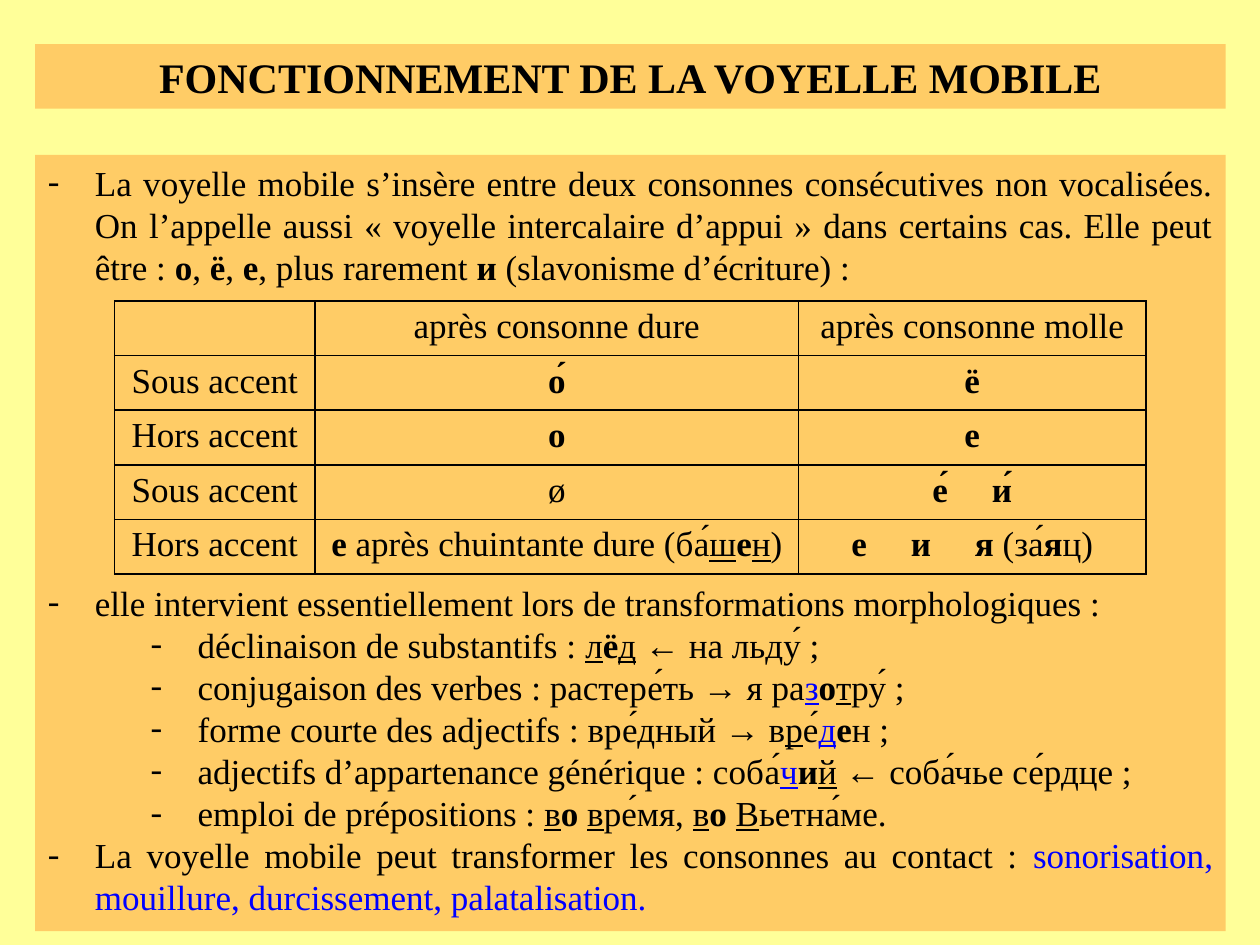
from dataclasses import dataclass

from lxml import etree
from pptx import Presentation
from pptx.dml.color import RGBColor
from pptx.enum.text import MSO_ANCHOR, MSO_AUTO_SIZE, PP_ALIGN
from pptx.oxml.ns import qn
from pptx.util import Cm, Pt

CENTER, JUSTIFY = PP_ALIGN.CENTER, PP_ALIGN.JUSTIFY
TOP, MIDDLE = MSO_ANCHOR.TOP, MSO_ANCHOR.MIDDLE
NO_AUTOFIT = MSO_AUTO_SIZE.NONE


@dataclass(frozen=True)
class Theme:
    """Colours, font and type sizes of the slide."""
    background: str = "FFFF99"
    panel: str = "FFCC66"
    text: str = "000000"
    accent: str = "0000FF"
    font: str = "Times New Roman"
    title_size: int = 24
    body_size: int = 20
    border: float = 1


@dataclass(frozen=True)
class Box:
    """A rectangle in centimetres."""
    left: float
    top: float
    width: float
    height: float

    def lengths(self):
        """Return left, top, width and height as lengths."""
        return [Cm(value) for value in (self.left, self.top, self.width, self.height)]


THEME = Theme()
TITLE_BOX = Box(0.71, 0.89, 24, 1.3)
BODY_BOX = Box(0.71, 3.12, 24, 15.65)

BOLD = {"bold": True}
UNDERLINED = {"underline": True}
BLUE = {"color": THEME.accent}
CHANGED = {**BLUE, **UNDERLINED}
WIDE_GAP = (" ", {"bold": True, "tracking": 20})

HANGING = 0.95
LEVEL_MARGINS = (0.95, 3.02)
TABLE_GAP = 168

PARAGRAPHS = [
    (0, 0, ["La voyelle mobile s’insère entre deux consonnes consécutives non vocalisées. "
            "On l’appelle aussi « voyelle intercalaire d’appui » dans certains cas. "
            "Elle peut être : ", ("о", BOLD), ", ", ("ё", BOLD), ", ", ("е", BOLD),
            ", plus rarement ", ("и ", BOLD), "(slavonisme d’écriture) :"]),
    (0, TABLE_GAP, ["elle intervient essentiellement lors de transformations morphologiques :"]),
    (1, 0, ["déclinaison de substantifs : ", ("л", UNDERLINED), ("ё", BOLD),
            ("д", UNDERLINED), " ← на льду́ ;"]),
    (1, 0, ["conjugaison des verbes : растере́ть → я ра", ("з", CHANGED), ("о", BOLD),
            ("т", UNDERLINED), "ру́ ;"]),
    (1, 0, ["forme courte des adjectifs : вре́дный → в", ("р", UNDERLINED), "е́",
            ("д", CHANGED), ("е", BOLD), "н ;"]),
    (1, 0, ["adjectifs d’appartenance générique : соба́", ("ч", CHANGED), ("и", BOLD),
            ("й", UNDERLINED), " ← соба́чье се́рдце ;"]),
    (1, 0, ["emploi de prépositions : ", ("в", UNDERLINED), ("о ", BOLD),
            ("в", UNDERLINED), "ре́мя, ", ("в", UNDERLINED), ("о ", BOLD),
            ("В", UNDERLINED), "ьетна́ме."]),
    (0, 0, ["La voyelle mobile peut transformer les consonnes au contact : ",
            ("sonorisation, mouillure, durcissement, palatalisation.", BLUE)]),
]

COLUMN_WIDTHS = (4.04, 9.75, 7)
ROW_HEIGHT = 1.1
TABLE_ROWS = [
    [[], ["après consonne dure"], ["après consonne molle"]],
    [["Sous accent"], [("о́", BOLD)], [("ё", BOLD)]],
    [["Hors accent"], [("о", BOLD)], [("е", BOLD)]],
    [["Sous accent"], ["ø"], [("е́", BOLD), WIDE_GAP, ("и́", BOLD)]],
    [["Hors accent"],
     [("е ", BOLD), "après chuintante dure (ба́", ("ш", UNDERLINED), ("е", BOLD),
      ("н", UNDERLINED), ")"],
     [("е", BOLD), WIDE_GAP, ("и", BOLD), WIDE_GAP, ("я ", BOLD), "(за́", ("я", BOLD), "ц)"]],
]


def set_attributes(target, values):
    """Set every attribute named in a dict."""
    for name, value in values.items():
        setattr(target, name, value)


def write_runs(paragraph, pieces, size):
    """Add plain strings and (text, style) pairs as runs."""
    for piece in pieces:
        text, style = (piece, {}) if isinstance(piece, str) else piece
        run = paragraph.add_run()
        run.text = text
        set_attributes(run.font, {
            "name": THEME.font,
            "size": Pt(size),
            "bold": style.get("bold", False),
            "underline": style.get("underline", False),
        })
        run.font.color.rgb = RGBColor.from_string(style.get("color", THEME.text))
        if "tracking" in style:
            run._r.get_or_add_rPr().set("spc", str(style["tracking"] * 100))


def place_panel(shape, box, anchor):
    """Move a placeholder into a box and give it the panel look."""
    set_attributes(shape, dict(zip(("left", "top", "width", "height"), box.lengths())))
    shape.fill.solid()
    shape.fill.fore_color.rgb = RGBColor.from_string(THEME.panel)
    set_attributes(shape.text_frame, {
        "auto_size": NO_AUTOFIT, "word_wrap": True, "vertical_anchor": anchor,
    })


def add_dash(paragraph, level):
    """Give a paragraph a hanging dash bullet."""
    properties = paragraph._p.get_or_add_pPr()
    properties.set("marL", str(Cm(LEVEL_MARGINS[level])))
    properties.set("indent", str(-Cm(HANGING)))
    etree.SubElement(properties, qn("a:buFont"), typeface=THEME.font)
    etree.SubElement(properties, qn("a:buChar"), char="-")


def build_title(slide, box):
    """Fill the title placeholder."""
    title = slide.shapes.title
    place_panel(title, box, MIDDLE)
    paragraph = title.text_frame.paragraphs[0]
    paragraph.alignment = CENTER
    write_runs(paragraph, [("FONCTIONNEMENT DE LA VOYELLE MOBILE", BOLD)], THEME.title_size)


def build_body(slide, box):
    """Fill the body placeholder, leaving room for the table."""
    body = slide.placeholders[1]
    place_panel(body, box, TOP)
    frame = body.text_frame
    for index, (level, space_before, pieces) in enumerate(PARAGRAPHS):
        paragraph = frame.add_paragraph() if index else frame.paragraphs[0]
        set_attributes(paragraph, {
            "level": level, "alignment": JUSTIFY,
            "space_before": Pt(space_before), "space_after": Pt(0),
        })
        add_dash(paragraph, level)
        write_runs(paragraph, pieces, THEME.body_size)


def add_borders(cell):
    """Draw a thin line on the four sides of a cell."""
    properties = cell._tc.get_or_add_tcPr()
    for side in ("lnL", "lnR", "lnT", "lnB"):
        line = etree.SubElement(properties, qn(f"a:{side}"), w=str(Pt(THEME.border)))
        fill = etree.SubElement(line, qn("a:solidFill"))
        etree.SubElement(fill, qn("a:srgbClr"), val=THEME.text)


def build_table(slide, box):
    """Add the vowel table in the gap of the body box."""
    table_box = Box(box.left + 1.6, box.top + 2.95,
                    sum(COLUMN_WIDTHS), ROW_HEIGHT * len(TABLE_ROWS))
    table = slide.shapes.add_table(
        len(TABLE_ROWS), len(COLUMN_WIDTHS), *table_box.lengths()).table
    set_attributes(table, {"first_row": False, "horz_banding": False})
    for column, width in zip(table.columns, COLUMN_WIDTHS):
        column.width = Cm(width)
    for row, contents in zip(table.rows, TABLE_ROWS):
        row.height = Cm(ROW_HEIGHT)
        for cell, pieces in zip(row.cells, contents):
            add_borders(cell)
            cell.fill.background()
            paragraph = cell.text_frame.paragraphs[0]
            paragraph.alignment = CENTER
            write_runs(paragraph, pieces, THEME.body_size)


def main():
    """Build and save the presentation."""
    presentation = Presentation()
    set_attributes(presentation, {"slide_width": Cm(25.4), "slide_height": Cm(19.05)})
    slide = presentation.slides.add_slide(presentation.slide_layouts[1])
    slide.background.fill.solid()
    slide.background.fill.fore_color.rgb = RGBColor.from_string(THEME.background)
    build_title(slide, TITLE_BOX)
    build_body(slide, BODY_BOX)
    build_table(slide, BODY_BOX)
    presentation.save("out.pptx")


if __name__ == "__main__":
    main()
